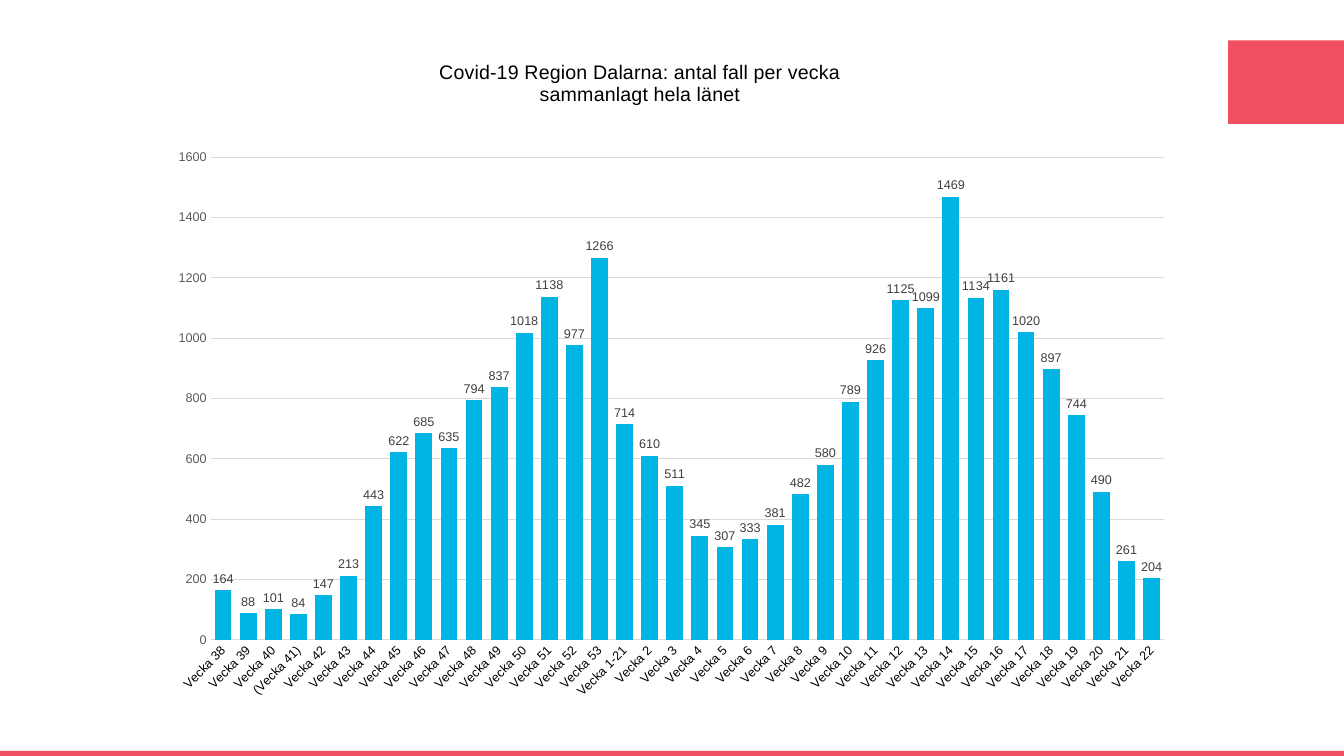
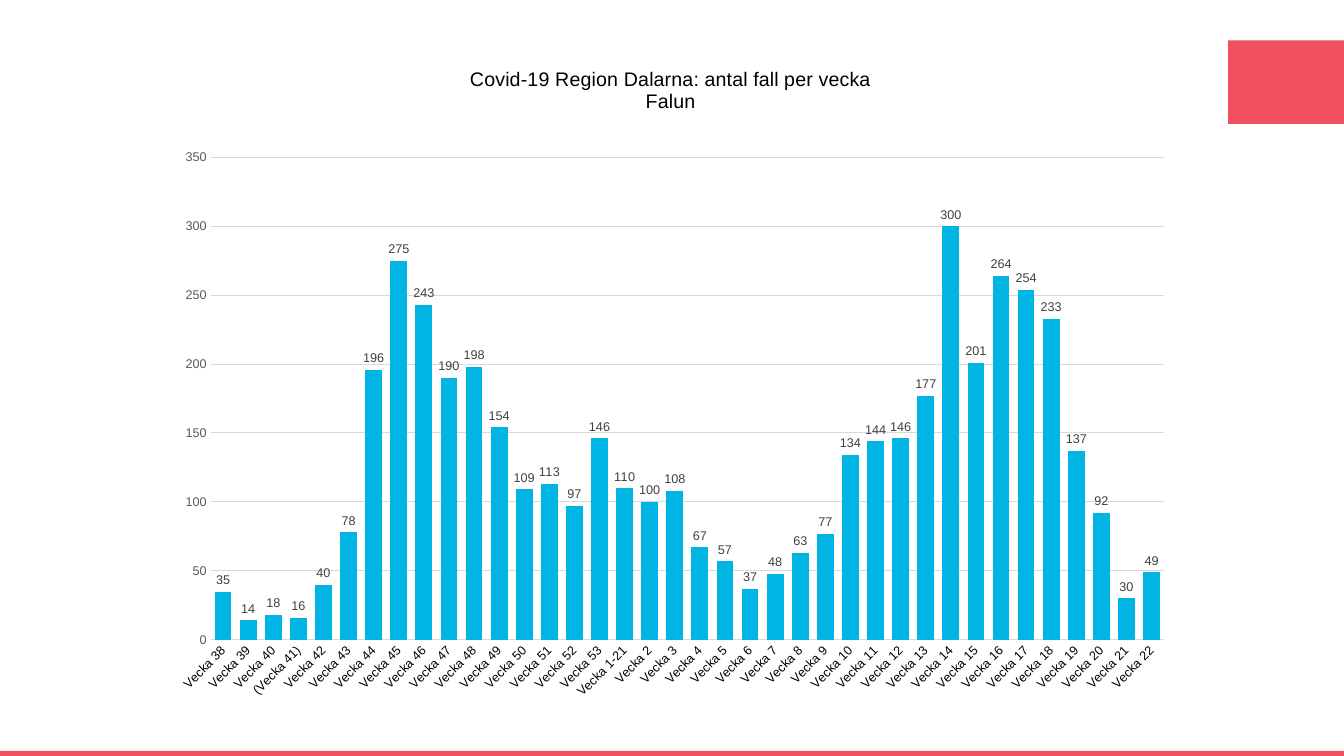
from dataclasses import dataclass

from lxml import etree
from pptx import Presentation
from pptx.chart.data import CategoryChartData
from pptx.dml.color import RGBColor
from pptx.enum.chart import XL_CHART_TYPE, XL_LABEL_POSITION, XL_TICK_MARK
from pptx.enum.shapes import MSO_SHAPE
from pptx.oxml.ns import qn
from pptx.util import Inches, Pt

COLUMNS = XL_CHART_TYPE.COLUMN_CLUSTERED
OUTSIDE_END = XL_LABEL_POSITION.OUTSIDE_END
NO_TICK = XL_TICK_MARK.NONE
RECTANGLE = MSO_SHAPE.RECTANGLE


@dataclass(frozen=True)
class Theme:
    font: str = "Arial"
    accent: str = "F15060"
    bar: str = "00B4E4"
    text: str = "000000"
    axis_text: str = "595959"
    label_text: str = "404040"
    grid: str = "D9D9D9"
    title_size: float = 14
    base_size: float = 10
    axis_size: float = 9
    line_width: float = 0.75


THEME = Theme()

# Content
WEEKS = ([f"(Vecka {n})" if n == 41 else f"Vecka {n}" for n in range(38, 54)]
         + ["Vecka 1-21"] + [f"Vecka {n}" for n in range(2, 23)])
TITLE = "Covid-19 Region Dalarna: antal fall per vecka"
CHARTS = [
    dict(area="sammanlagt hela länet", title_at=(0.27, 0.02), top=1600, step=200,
         cases=[164, 88, 101, 84, 147, 213, 443, 622, 685, 635, 794, 837, 1018,
                1138, 977, 1266, 714, 610, 511, 345, 307, 333, 381, 482, 580,
                789, 926, 1125, 1099, 1469, 1134, 1161, 1020, 897, 744, 490,
                261, 204]),
    dict(area="Falun", title_at=(0.3, 0.03), top=350, step=50,
         cases=[35, 14, 18, 16, 40, 78, 196, 275, 243, 190, 198, 154, 109, 113,
                97, 146, 110, 100, 108, 67, 57, 37, 48, 63, 77, 134, 144, 146,
                177, 300, 201, 264, 254, 233, 137, 92, 30, 49]),
]

# Positions: left, top, width, height
BANDS = [(0, 7.45, 13.33, 0.05), (12.18, 0.4, 1.15, 0.83)]
CHART_BOX = (1.58, 0.43, 10.17, 6.65)
PLOT_BOX = dict(x=0.05, y=0.17, w=0.93, h=0.72)  # shares of the chart box


def rgb(code):
    return RGBColor.from_string(code)


def set_font(font, size, color):
    font.name = THEME.font
    font.size = Pt(size)
    font.bold = False
    font.color.rgb = rgb(color)


def set_line(line):
    line.color.rgb = rgb(THEME.grid)
    line.width = Pt(THEME.line_width)


def set_layout(parent, index, box, inner=False):
    """Give a chart part a fixed place inside the chart."""
    for old in parent.findall(qn("c:layout")):
        parent.remove(old)
    layout = etree.Element(qn("c:layout"))
    manual = etree.SubElement(layout, qn("c:manualLayout"))
    if inner:
        etree.SubElement(manual, qn("c:layoutTarget")).set("val", "inner")
    for key in ("x", "y"):
        etree.SubElement(manual, qn(f"c:{key}Mode")).set("val", "edge")
    for key, share in box.items():
        etree.SubElement(manual, qn(f"c:{key}")).set("val", str(share))
    parent.insert(index, layout)


def add_bands(slide):
    for box in BANDS:
        sp = slide.shapes.add_shape(RECTANGLE, *map(Inches, box))
        sp.shadow.inherit = False
        sp.fill.solid()
        sp.fill.fore_color.rgb = rgb(THEME.accent)
        sp.line.fill.background()


def add_title(chart, area, at):
    chart.has_title = True
    title = chart.chart_title
    title.include_in_layout = False
    tf = title.text_frame
    for i, text in enumerate((TITLE, area)):
        p = tf.add_paragraph() if i else tf.paragraphs[0]
        r = p.add_run()
        r.text = text
        set_font(r.font, THEME.title_size, THEME.text)
    set_layout(title._element, 1, dict(zip("xy", at)))


def style_axes(chart, top, step):
    weeks, cases = chart.category_axis, chart.value_axis
    for axis, color in ((weeks, THEME.text), (cases, THEME.axis_text)):
        axis.major_tick_mark = axis.minor_tick_mark = NO_TICK
        set_font(axis.tick_labels.font, THEME.axis_size, color)
    set_line(weeks.format.line)
    body = weeks.tick_labels.font._element.getparent().getparent().getparent()
    body.find(qn("a:bodyPr")).set("rot", "-2700000")  # 45 degrees upwards
    cases.minimum_scale, cases.maximum_scale, cases.major_unit = 0, top, step
    cases.format.line.fill.background()
    cases.has_major_gridlines = True
    set_line(cases.major_gridlines.format.line)


def style_bars(plot):
    plot.gap_width, plot.overlap = 50, -27
    plot.vary_by_categories = False
    fill = plot.series[0].format.fill
    fill.solid()
    fill.fore_color.rgb = rgb(THEME.bar)
    plot.has_data_labels = True
    labels = plot.data_labels
    labels.show_value = True
    labels.position = OUTSIDE_END
    set_font(labels.font, THEME.axis_size, THEME.label_text)


def add_case_chart(slide, area, title_at, top, step, cases):
    data = CategoryChartData()
    data.categories = WEEKS
    data.add_series("Series 1", cases)
    chart = slide.shapes.add_chart(COLUMNS, *map(Inches, CHART_BOX), data).chart
    chart.has_legend = False
    set_font(chart.font, THEME.base_size, THEME.text)
    add_title(chart, area, title_at)
    style_axes(chart, top, step)
    style_bars(chart.plots[0])
    plot_area = chart._chartSpace.find(".//" + qn("c:plotArea"))
    set_layout(plot_area, 0, PLOT_BOX, inner=True)


def main():
    prs = Presentation()
    prs.slide_width, prs.slide_height = Inches(13.33), Inches(7.5)
    for content in CHARTS:
        slide = prs.slides.add_slide(prs.slide_layouts[6])
        add_bands(slide)
        add_case_chart(slide, **content)
    prs.save("out.pptx")


if __name__ == "__main__":
    main()
